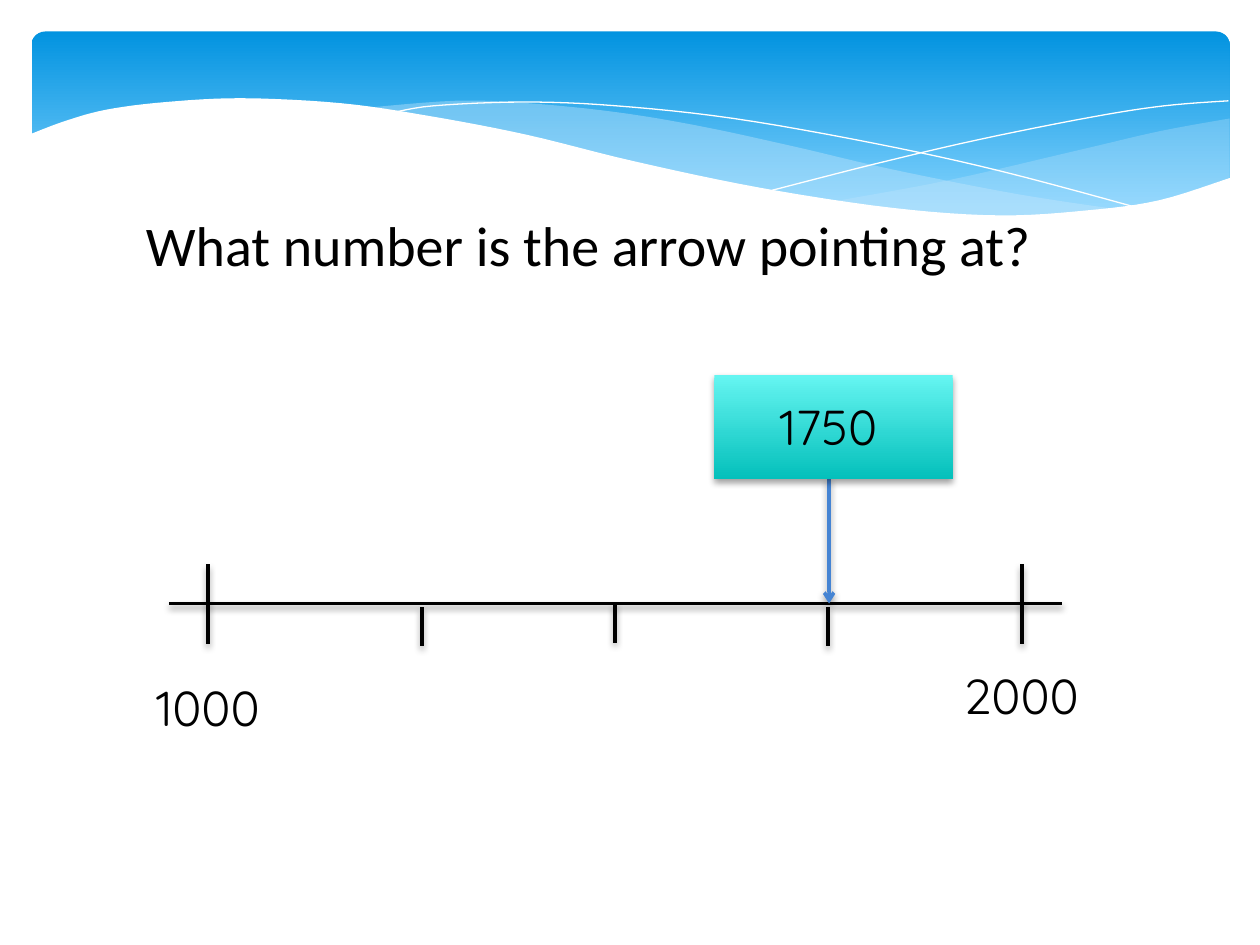
from dataclasses import dataclass

from lxml.etree import SubElement
from pptx import Presentation
from pptx.dml.color import RGBColor
from pptx.enum.shapes import MSO_CONNECTOR, MSO_SHAPE
from pptx.enum.text import MSO_AUTO_SIZE, PP_ALIGN
from pptx.oxml.ns import qn
from pptx.util import Inches, Pt


@dataclass(frozen=True)
class Theme:
    """Colours, fonts and sizes."""
    ink: str = "000000"
    paper: str = "FFFFFF"
    arrow: str = "4584D3"
    veil: str = "C6E7FC"
    sky: tuple = ((0, "0293E0"), (0.9, "83D3FE"))
    teal: tuple = ((0, "65F5F1"), (1, "04C0BB"))
    head: str = "Calibri"
    digit: str = "Quicksand"
    big: int = 32
    mid: int = 28
    rule: int = 2


@dataclass(frozen=True)
class Box:
    """A region on a grid of 100 columns by 75 rows."""
    x: float
    y: float
    w: float
    h: float

    def sub(self, x, y, w, h):
        """Return a box placed from this box's corner."""
        return Box(self.x + x, self.y + y, w, h)

    def spot(self, x, y):
        """Return a point of this box as slide lengths."""
        return Inches((self.x + x) / 10), Inches((self.y + y) / 10)

    def frame(self):
        """Return left, top, width and height as slide lengths."""
        return *self.spot(0, 0), Inches(self.w / 10), Inches(self.h / 10)


THEME = Theme()


def tint(code):
    """Turn a hex code into a colour."""
    return RGBColor.from_string(code)


def effect(shape, shade):
    """Give a shape a soft shadow, or none."""
    root = SubElement(shape.element.spPr, qn("a:effectLst"))
    if shade:
        cast = SubElement(root, qn("a:outerShdw"), blurRad=str(Pt(4)),
                          dist=str(Pt(2)), dir="5400000", rotWithShape="0")
        hue = SubElement(cast, qn("a:srgbClr"), val=THEME.ink)
        SubElement(hue, qn("a:alpha"), val="38000")


def write(slide, box, text, font=THEME.digit, size=THEME.mid,
          align=PP_ALIGN.CENTER, wrap=True):
    """Place formatted text in a box."""
    frame = slide.shapes.add_textbox(*box.frame()).text_frame
    frame.word_wrap = wrap
    frame.auto_size = MSO_AUTO_SIZE.SHAPE_TO_FIT_TEXT
    part = frame.paragraphs[0]
    part.alignment = align
    run = part.add_run()
    run.text = text
    run.font.name = font
    run.font.size = Pt(size)
    run.font.color.rgb = tint(THEME.ink)


def stroke(slide, start, end, color=THEME.ink, tip=False):
    """Draw a straight shadowed line, with an arrowhead if asked."""
    line = slide.shapes.add_connector(MSO_CONNECTOR.STRAIGHT, *start, *end)
    line.line.color.rgb = tint(color)
    line.line.width = Pt(THEME.rule)
    if tip:
        SubElement(line.element.spPr.find(qn("a:ln")), qn("a:tailEnd"), type="arrow")
    effect(line, True)


def panel(slide, box, kind, stops, shade=False):
    """Draw a shape with a downward gradient."""
    shape = slide.shapes.add_shape(kind, *box.frame())
    shape.fill.gradient()
    shape.fill.gradient_angle = 270
    for stop, (place, code) in zip(shape.fill.gradient_stops, stops):
        stop.position = place
        stop.color.rgb = tint(code)
    shape.line.fill.background()
    effect(shape, shade)
    return shape


def curve(*knots, steps=6):
    """Return points on a smooth curve through the knots."""
    ends = [knots[0], *knots, knots[-1]]
    points = []
    for a, b, c, d in zip(ends, ends[1:], ends[2:], ends[3:]):
        for step in range(steps):
            t = step / steps
            points.append(tuple(
                (2 * q + (r - p) * t + (2 * p - 5 * q + 4 * r - s) * t ** 2
                 + (3 * q - p - 3 * r + s) * t ** 3) / 2
                for p, q, r, s in zip(a, b, c, d)))
    return [*points, knots[-1]]


def outline(slide, box, points, fill=None, clear=None):
    """Draw a filled outline, or an open white hairline."""
    spots = [box.spot(*point) for point in points]
    build = slide.shapes.build_freeform(*spots[0])
    build.add_line_segments(spots[1:], close=fill is not None)
    shape = build.convert_to_shape()
    if fill:
        shape.fill.solid()
        shape.fill.fore_color.rgb = tint(fill)
        shape.line.fill.background()
    else:
        shape.fill.background()
        shape.line.color.rgb = tint(THEME.paper)
        shape.line.width = Pt(0)
    if clear:
        hue = shape.element.spPr.find(qn("a:solidFill"))[0]
        SubElement(hue, qn("a:alpha"), val=str(clear * 1000))
    effect(shape, False)


def banner(slide, box):
    """Draw the blue band and its waves."""
    band = panel(slide, box.sub(2.5, 2.5, 95.1, 15.6),
                 MSO_SHAPE.ROUNDED_RECTANGLE, THEME.sky)
    band.adjustments[0] = 0.07
    right = (curve((97.6, 9.4), (92.1, 10.4), (86.1, 11.8), (75.3, 14.3), (66.1, 16))
             + curve((66.1, 16), (71.9, 16.7), (79.2, 17.2), (85.4, 17),
                     (92.1, 16), (97.6, 14.1)))
    left = (curve((89.3, 16.7), (80.7, 15.4), (70.6, 13.4), (62.9, 11.6),
                  (55.5, 10), (48.9, 8.9), (42, 8.2), (36.1, 8), (28.6, 8.6))
            + curve((28.6, 8.6), (36.2, 9.7), (44.9, 11.6), (56.6, 14.3),
                    (65, 15.8), (73.6, 16.9), (81.8, 17.3), (89.3, 16.7)))
    front = (curve((97.7, 14.1), (92, 15.9), (86.3, 16.7), (79.3, 17.1),
                   (70.8, 16.5), (60.3, 14.9), (50.3, 12.8), (41.8, 10.7),
                   (34, 9.2), (27.1, 8.2), (19.3, 7.8), (13.2, 8.1),
                   (8.5, 8.7), (5.2, 9.6), (2.3, 10.7))
             + [(2.3, 22.4), (97.7, 22.4)])
    outline(slide, box, right, THEME.veil, 29)
    outline(slide, box, left, THEME.veil, 40)
    outline(slide, box, curve((30.9, 9), (34.4, 8.4), (41.6, 8.1), (48.9, 8.4),
                              (58.2, 9.4), (69.5, 11.4), (79.5, 13.6), (90.7, 16.6)))
    outline(slide, box, curve((61.3, 15.1), (69.5, 13), (77.6, 11.1),
                              (86.6, 9.3), (92.4, 8.4), (97.5, 8)))
    outline(slide, box, front, THEME.paper)


def scale(slide, box):
    """Draw the number line with its ticks and end labels."""
    axis = 18.1
    stroke(slide, box.spot(0, axis), box.spot(box.w, axis))
    ticks = ((3.1, 15, 6.3), (67.7, 15, 6.3),
             (20.1, 18.4, 3.1), (35.4, axis, 3.1), (52.3, 18.4, 3.1))
    for col, top, size in ticks:
        stroke(slide, box.spot(col, top), box.spot(col, top + size))
    write(slide, box.sub(-2.8, 23.5, 11.8, 5.7), "1000")
    write(slide, box.sub(62, 22.5, 11.3, 5.7), "2000", wrap=False)


def callout(slide, box):
    """Draw the value card and the arrow down to the line."""
    stroke(slide, box.spot(9.1, 8.1), box.spot(9.1, 18.1), THEME.arrow, tip=True)
    panel(slide, box, MSO_SHAPE.RECTANGLE, THEME.teal, shade=True)
    write(slide, box.sub(1.6, 1.2, 14.9, 5.7), "1750")


def main():
    """Build and save the slide."""
    deck = Presentation()
    deck.slide_width, deck.slide_height = Inches(10), Inches(7.5)
    slide = deck.slides.add_slide(deck.slide_layouts[6])
    banner(slide, Box(0, 0, 100, 22.4))
    write(slide, Box(10.6, 16.2, 76.4, 6.4), "What number is the arrow pointing at?",
          font=THEME.head, size=THEME.big, align=PP_ALIGN.LEFT)
    scale(slide, Box(13.4, 29.8, 70.9, 29.2))
    callout(slide, Box(56.7, 29.8, 18.9, 8.2))
    deck.save("out.pptx")


if __name__ == "__main__":
    main()
